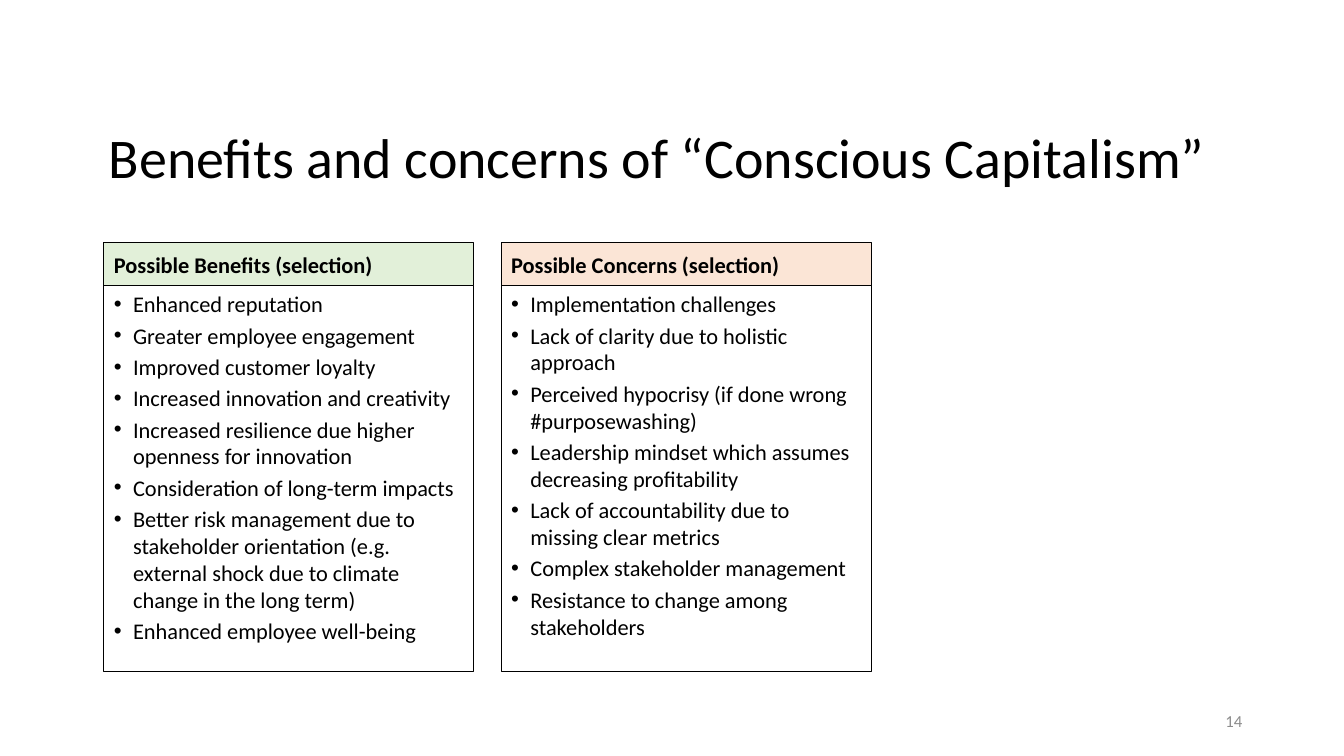
"""Build the slide on benefits and concerns of Conscious Capitalism."""
from dataclasses import dataclass

from lxml import etree
from pptx import Presentation
from pptx.dml import color
from pptx.enum import text
from pptx.oxml import ns
from pptx.util import Inches, Pt

COLORS = {
    "text": "000000",
    "number": "8C8C8C",
    "panel": "FFFFFF",
    "benefits": "E2F0D9",
    "concerns": "FBE5D6",
}
FONT = "Calibri"
COLUMN_WIDTH = 3.67
HEADING_TOP, HEADING_HEIGHT = 2.41, 0.42
LIST_HEIGHT = 3.83
BULLET_INDENT = 0.19


@dataclass
class Column:
    """A headed list and the placeholders that hold it."""
    heading: str
    color: str
    left: float
    heading_index: int
    list_index: int
    items: list[str]


COLUMNS = [
    Column("Possible Benefits (selection)", "benefits", 1.03, 1, 2, [
        "Enhanced reputation",
        "Greater employee engagement",
        "Improved customer loyalty",
        "Increased innovation and creativity",
        "Increased resilience due higher openness for innovation",
        "Consideration of long-term impacts",
        "Better risk management due to stakeholder orientation "
        "(e.g. external shock due to climate change in the long term)",
        "Enhanced employee well-being",
    ]),
    Column("Possible Concerns (selection)", "concerns", 4.97, 3, 4, [
        "Implementation challenges",
        "Lack of clarity due to holistic approach",
        "Perceived hypocrisy (if done wrong #purposewashing)",
        "Leadership mindset which assumes decreasing profitability",
        "Lack of accountability due to missing clear metrics",
        "Complex stakeholder management",
        "Resistance to change among stakeholders",
    ]),
]


def rgb(name: str) -> color.RGBColor:
    """Return the named colour."""
    return color.RGBColor.from_string(COLORS[name])


def place(box, left: float, top: float, width: float, height: float) -> None:
    """Set the position and size of a box in inches."""
    box.left, box.top = Inches(left), Inches(top)
    box.width, box.height = Inches(width), Inches(height)


def style_frame(frame, anchor, margin: float = 0.05) -> None:
    """Set wrapping, anchor and insets of a text frame."""
    frame.word_wrap = True
    frame.auto_size = text.MSO_AUTO_SIZE.NONE
    frame.vertical_anchor = anchor
    frame.margin_left = frame.margin_right = Inches(0.1)
    frame.margin_top = frame.margin_bottom = Inches(margin)


def style_paragraph(para, size: float, name: str = "text", bold: bool = False,
                    align=text.PP_ALIGN.LEFT, before: float = 0) -> None:
    """Set alignment, spacing and font of a paragraph."""
    para.alignment = align
    para.space_before = Pt(before)
    para.font.name = FONT
    para.font.size = Pt(size)
    para.font.bold = bold
    para.font.color.rgb = rgb(name)


def add_bullet(para) -> None:
    """Give a paragraph a hanging round bullet."""
    properties = para._p.get_or_add_pPr()
    properties.set("marL", str(Inches(BULLET_INDENT)))
    properties.set("indent", str(-Inches(BULLET_INDENT)))
    font = etree.SubElement(properties, ns.qn("a:buFont"))
    font.set("typeface", "Arial")
    bullet = etree.SubElement(properties, ns.qn("a:buChar"))
    bullet.set("char", "•")


def outline(box, fill: str) -> None:
    """Give a box a fill and a thin outline."""
    box.fill.solid()
    box.fill.fore_color.rgb = rgb(fill)
    box.line.color.rgb = rgb("text")
    box.line.width = Pt(0.75)


def draw_column(page, column: Column) -> None:
    """Fill the heading and list placeholders of one column."""
    boxes = {box.placeholder_format.idx: box for box in page.placeholders}
    heading = boxes[column.heading_index]
    place(heading, column.left, HEADING_TOP, COLUMN_WIDTH, HEADING_HEIGHT)
    outline(heading, column.color)
    heading.text_frame.text = column.heading
    style_frame(heading.text_frame, text.MSO_ANCHOR.MIDDLE, 0.03)
    style_paragraph(heading.text_frame.paragraphs[0], 16, bold=True)

    panel = boxes[column.list_index]
    place(panel, column.left, HEADING_TOP + HEADING_HEIGHT,
          COLUMN_WIDTH, LIST_HEIGHT)
    outline(panel, "panel")
    panel.text_frame.text = "\n".join(column.items)
    style_frame(panel.text_frame, text.MSO_ANCHOR.TOP)
    for index, para in enumerate(panel.text_frame.paragraphs):
        add_bullet(para)
        style_paragraph(para, 16, before=3.2 if index else 0)


def draw_title(page) -> None:
    """Fill the title placeholder."""
    title = page.shapes.title
    place(title, 0.98, 0.87, 11.5, 1.45)
    title.text_frame.text = "Benefits and concerns of “Conscious Capitalism”"
    style_frame(title.text_frame, text.MSO_ANCHOR.MIDDLE)
    para = title.text_frame.paragraphs[0]
    para.line_spacing = 0.9
    style_paragraph(para, 40)


def draw_number(page) -> None:
    """Add the page number."""
    box = page.shapes.add_textbox(
        Inches(9.42), Inches(6.95), Inches(3), Inches(0.4))
    box.text_frame.text = "14"
    style_frame(box.text_frame, text.MSO_ANCHOR.MIDDLE)
    style_paragraph(box.text_frame.paragraphs[0], 12, "number",
                    align=text.PP_ALIGN.RIGHT)


def main() -> None:
    """Build and save the deck."""
    deck = Presentation()
    deck.slide_width, deck.slide_height = Inches(13.33), Inches(7.5)
    page = deck.slides.add_slide(deck.slide_layouts.get_by_name("Comparison"))
    draw_title(page)
    draw_number(page)
    for column in COLUMNS:
        draw_column(page, column)
    deck.save("out.pptx")


if __name__ == "__main__":
    main()
